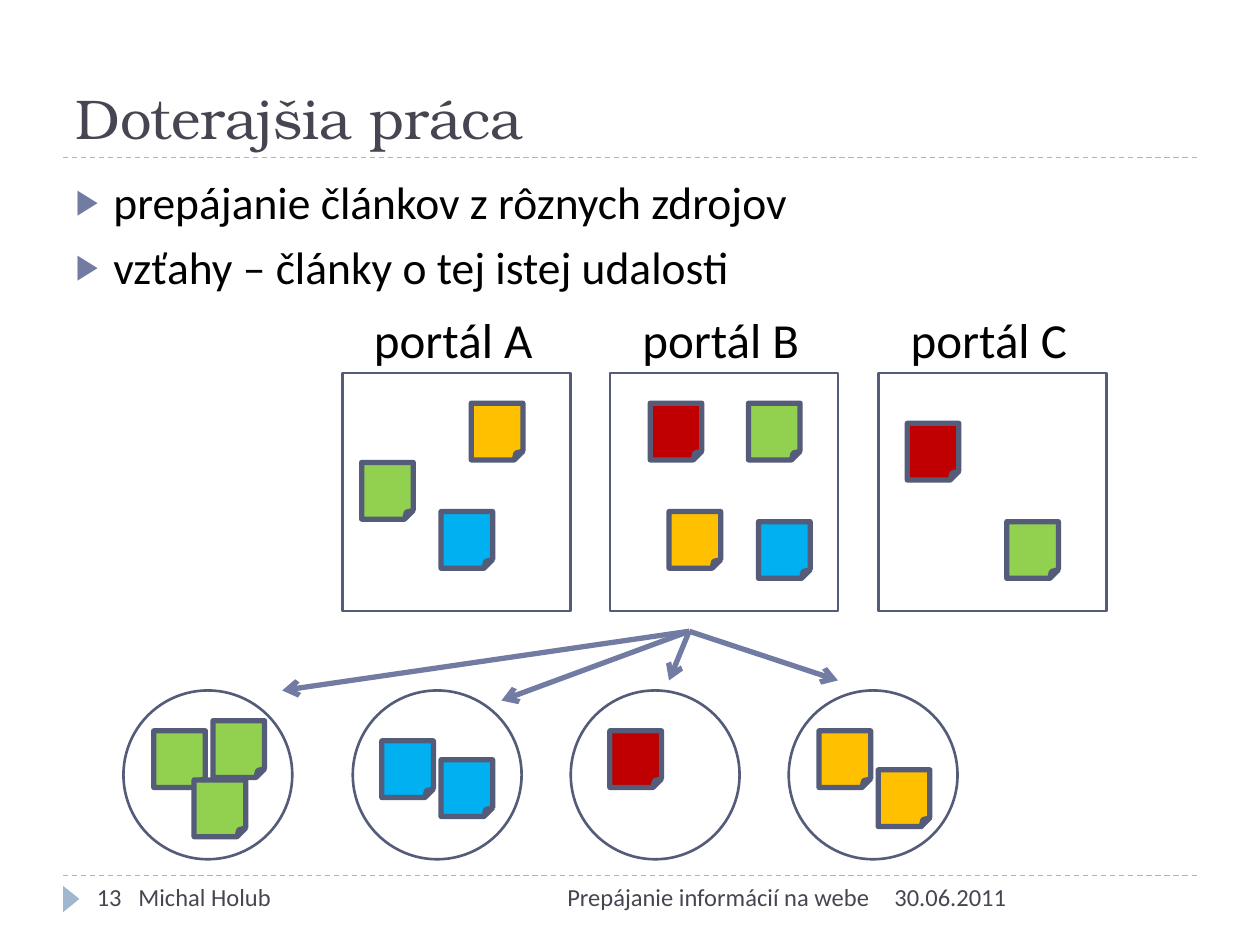
"""Build the slide on linking news articles across portals."""
from lxml import etree
from pptx import Presentation
from pptx.dml.color import RGBColor
from pptx.enum.dml import MSO_LINE
from pptx.enum.shapes import MSO_CONNECTOR, MSO_SHAPE
from pptx.enum.text import MSO_ANCHOR, PP_ALIGN
from pptx.oxml.ns import qn
from pptx.util import Inches, Pt

STRAIGHT = MSO_CONNECTOR.STRAIGHT
RECT, OVAL = MSO_SHAPE.RECTANGLE, MSO_SHAPE.OVAL
NOTE, TRIANGLE = MSO_SHAPE.FOLDED_CORNER, MSO_SHAPE.ISOSCELES_TRIANGLE
LEFT, RIGHT = PP_ALIGN.LEFT, PP_ALIGN.RIGHT
BOTTOM, TOP = MSO_ANCHOR.BOTTOM, MSO_ANCHOR.TOP
DASH = MSO_LINE.DASH

BLACK = RGBColor(0x00, 0x00, 0x00)
SLATE = RGBColor(0x46, 0x46, 0x53)
PALE = RGBColor(0x9F, 0xB8, 0xCD)
ACCENT = RGBColor(0x72, 0x7C, 0xA3)
OUTLINE = RGBColor(0x54, 0x5C, 0x79)
GREEN = RGBColor(0x92, 0xD0, 0x50)
YELLOW = RGBColor(0xFF, 0xC0, 0x00)
BLUE = RGBColor(0x00, 0xB0, 0xF0)
RED = RGBColor(0xC0, 0x00, 0x00)


def add_shape(kind, x, y, w, h, fill=None, weight=1.5):
    s = slide.shapes.add_shape(kind, Inches(x), Inches(y), Inches(w), Inches(h))
    s.shadow.inherit = False
    if fill is None:
        s.fill.background()
    else:
        s.fill.solid()
        s.fill.fore_color.rgb = fill
    if weight:
        s.line.color.rgb = OUTLINE
        s.line.width = Pt(weight)
    else:
        s.line.fill.background()
    return s


def add_line(x1, y1, x2, y2, color, weight):
    s = slide.shapes.add_connector(
        STRAIGHT, Inches(x1), Inches(y1), Inches(x2), Inches(y2))
    s.line.color.rgb = color
    s.line.width = Pt(weight)
    ln = s.line._get_or_add_ln()
    ln.addnext(etree.Element(qn("a:effectLst")))
    return s


prs = Presentation()
prs.slide_width, prs.slide_height = Inches(10), Inches(7.5)
slide = prs.slides.add_slide(prs.slide_layouts[1])

for y in (6.95, 1.25):
    add_line(0.5, y, 9.5, y, PALE, 0.75).line.dash_style = DASH
add_shape(TRIANGLE, 0.46, 7.07, 0.21, 0.13, PALE, 0).rotation = 90

title = slide.shapes.title
title.left, title.top = Inches(0.5), Inches(0.17)
title.width, title.height = Inches(9), Inches(1.08)
tf = title.text_frame
tf.text = "Doterajšia práca"
tf.vertical_anchor = BOTTOM
p = tf.paragraphs[0]
p.alignment = LEFT
p.font.name, p.font.size = "TeX Gyre Bonum", Pt(32)
p.font.color.rgb = SLATE

body = slide.placeholders[1]
body.left, body.top = Inches(0.5), Inches(1.33)
body.width, body.height = Inches(9), Inches(5.4)
tf = body.text_frame
tf.text = "prepájanie článkov z rôznych zdrojov\nvzťahy – články o tej istej udalosti"
tf.vertical_anchor = TOP
for p in tf.paragraphs:
    p.space_before = Pt(6)
    p.font.name, p.font.size = "Calibri", Pt(26)
    p.font.color.rgb = BLACK
    pPr = p._p.get_or_add_pPr()
    pPr.set("marL", str(Inches(0.3)))
    pPr.set("indent", str(-Inches(0.3)))
    bullet_color = etree.Element(qn("a:buClr"))
    etree.SubElement(bullet_color, qn("a:srgbClr"), val=str(ACCENT))
    bullet = [bullet_color,
              etree.Element(qn("a:buSzPct"), val="76000"),
              etree.Element(qn("a:buChar"), char="▶")]
    for element in bullet:
        pPr.insert_element_before(element, "a:tabLst", "a:defRPr", "a:extLst")

texts = [
    ("30.06.2011", 7, 6.95, 2.5, 0.4, 14, SLATE, LEFT),
    ("Prepájanie informácií na webe", 3.17, 6.95, 3.83, 0.4, 14, SLATE, RIGHT),
    ("13\tMichal Holub", 0.67, 6.95, 2.17, 0.4, 14, SLATE, LEFT),
    ("portál A", 2.87, 2.41, 1.5, 0.57, 28, BLACK, LEFT),
    ("portál B", 5, 2.41, 1.5, 0.57, 28, BLACK, LEFT),
    ("portál C", 7.13, 2.41, 1.57, 0.57, 28, BLACK, LEFT),
]
for text, x, y, w, h, size, color, align in texts:
    s = slide.shapes.add_textbox(Inches(x), Inches(y), Inches(w), Inches(h))
    tf = s.text_frame
    tf.word_wrap = True
    tf.text = text
    p = tf.paragraphs[0]
    p.alignment = align
    p.font.name, p.font.size = "Calibri", Pt(size)
    p.font.color.rgb = color
    if "\t" in text:
        tabs = etree.Element(qn("a:tabLst"))
        etree.SubElement(tabs, qn("a:tab"), pos=str(Inches(0.33)), algn="l")
        p._p.get_or_add_pPr().insert_element_before(tabs, "a:defRPr", "a:extLst")

for x in (2.72, 4.84, 6.97):
    add_shape(RECT, x, 2.96, 1.81, 1.89)
for x in (0.98, 2.8, 4.53, 6.26):
    add_shape(OVAL, x, 5.48, 1.34, 1.34)

articles = {
    GREEN: [(2.87, 3.67), (5.94, 3.2), (7.99, 4.14),
            (1.22, 5.8), (1.69, 5.72), (1.54, 6.19)],
    BLUE: [(6.02, 4.14), (3.5, 4.06), (3.03, 5.88), (3.5, 6.03)],
    RED: [(7.2, 3.36), (5.16, 3.2), (4.84, 5.8)],
    YELLOW: [(3.74, 3.2), (5.31, 4.06), (6.5, 5.8), (6.97, 6.11)],
}
for color, places in articles.items():
    for x, y in places:
        add_shape(NOTE, x, y, 0.41, 0.45, color, 3)

for x, y in ((2.24, 5.48), (3.98, 5.56), (5.31, 5.4), (6.65, 5.4)):
    s = add_line(5.47, 5.01, x, y, ACCENT, 3)
    etree.SubElement(s.line._get_or_add_ln(), qn("a:tailEnd"), type="arrow")

prs.save("out.pptx")
